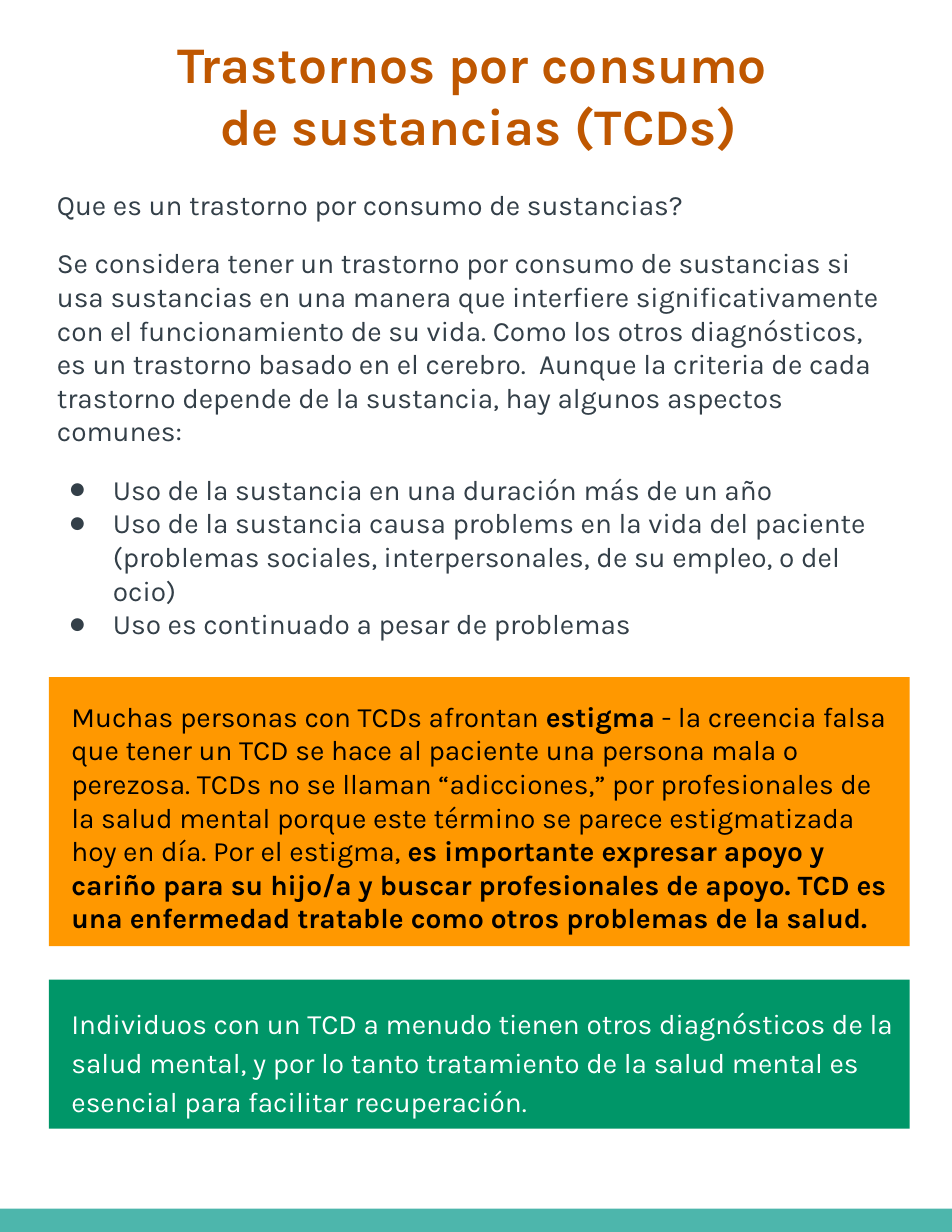
from dataclasses import dataclass

from lxml import etree
from pptx import Presentation
from pptx import util as u
from pptx.dml.color import RGBColor
from pptx.enum import shapes, text
from pptx.oxml.ns import qn

FONT = "Karla"
COLOURS = {
    "title": "BF5700",
    "body": "333F48",
    "stigma_text": "000000",
    "care_text": "FFFFFF",
    "stigma_box": "FF9800",
    "care_box": "009668",
    "footer": "4DB6AC",
}
PAGE_WIDTH, PAGE_HEIGHT = 21.59, 27.94
FOOTER_HEIGHT = 0.53
BOX_LEFT, BOX_WIDTH = 1.11, 19.52


@dataclass
class Paragraph:
    """Runs alternate between regular and bold, starting with regular."""
    runs: tuple[str, ...]
    before: float = 0
    after: float = 0
    line_spacing: float = 1.0
    bullet: bool = False


@dataclass
class Block:
    """A text area in centimetres; insets run left, top, right, bottom."""
    left: float
    top: float
    width: float
    height: float
    colour: str
    paragraphs: list[Paragraph]
    fill: str | None = None
    size: float = 18
    bold: bool = False
    centred: bool = False
    insets: tuple[float, float, float, float] = (0.25, 0.25, 0.25, 0.25)


TITLE = Block(
    -0.35, 0.48, 22.43, 2.03, "title",
    [Paragraph(("Trastornos por consumo ",)), Paragraph(("de sustancias (TCDs)",))],
    size=33, bold=True, centred=True,
)
BODY = Block(
    1.04, 4, 19.51, 12.17, "body",
    [
        Paragraph(("Que es un trastorno por consumo de sustancias?",)),
        Paragraph((
            "Se considera tener un trastorno por consumo de sustancias si usa sustancias "
            "en una manera que interfiere significativamente con el funcionamiento de su "
            "vida. Como los otros diagnósticos, es un trastorno basado en el cerebro.  "
            "Aunque la criteria de cada trastorno depende de la sustancia, hay algunos "
            "aspectos comunes:",
        ), before=16),
        Paragraph(("Uso de la sustancia en una duración más de un año",),
                  before=16, bullet=True),
        Paragraph((
            "Uso de la sustancia causa problems en la vida del paciente (problemas "
            "sociales, interpersonales, de su empleo, o del ocio)",
        ), bullet=True),
        Paragraph(("Uso es continuado a pesar de problemas",), bullet=True),
    ],
)
STIGMA = Block(
    BOX_LEFT, 15.36, BOX_WIDTH, 6.1, "stigma_text",
    [Paragraph((
        "Muchas personas con TCDs afrontan ",
        "estigma",
        " - la creencia falsa que tener un TCD se hace al paciente una persona mala o "
        "perezosa. TCDs no se llaman “adicciones,” por profesionales de la salud mental "
        "porque este término se parece estigmatizada hoy en día. Por el estigma, ",
        "es importante expresar apoyo y cariño para su hijo/a y buscar profesionales de "
        "apoyo. TCD es una enfermedad tratable como otros problemas de la salud.",
    ), after=16)],
    fill="stigma_box", insets=(0.51, 0.5, 0.45, 0.5),
)
CARE = Block(
    BOX_LEFT, 22.22, BOX_WIDTH, 3.38, "care_text",
    [Paragraph((
        "Individuos con un TCD a menudo tienen otros diagnósticos de la salud mental, y "
        "por lo tanto tratamiento de la salud mental es esencial para facilitar "
        "recuperación.",
    ), after=16, line_spacing=1.15)],
    fill="care_box", insets=(0.51, 0.5, 0.25, 0.5),
)


def rgb(name: str) -> RGBColor:
    return RGBColor.from_string(COLOURS[name])


def add_rectangle(slide, left: float, top: float, width: float, height: float, fill: str):
    shape = slide.shapes.add_shape(
        shapes.MSO_SHAPE.RECTANGLE, u.Cm(left), u.Cm(top), u.Cm(width), u.Cm(height))
    shape.shadow.inherit = False
    shape.fill.solid()
    shape.fill.fore_color.rgb = rgb(fill)
    shape.line.fill.background()
    return shape


def add_bullet(paragraph, colour: str) -> None:
    properties = paragraph._p.get_or_add_pPr()
    properties.set("marL", str(u.Cm(1.27)))
    properties.set("indent", str(u.Cm(-0.97)))
    bullet_colour = etree.SubElement(properties, qn("a:buClr"))
    etree.SubElement(bullet_colour, qn("a:srgbClr"), val=COLOURS[colour])
    etree.SubElement(properties, qn("a:buSzPct"), val="60000")
    etree.SubElement(properties, qn("a:buFont"), typeface=FONT)
    etree.SubElement(properties, qn("a:buChar"), char="●")


def write_paragraph(paragraph, content: Paragraph, block: Block) -> None:
    paragraph.alignment = text.PP_ALIGN.CENTER if block.centred else text.PP_ALIGN.LEFT
    paragraph.line_spacing = content.line_spacing
    paragraph.space_before = u.Pt(content.before)
    paragraph.space_after = u.Pt(content.after)
    if content.bullet:
        add_bullet(paragraph, block.colour)
    for index, words in enumerate(content.runs):
        run = paragraph.add_run()
        run.text = words
        run.font.name = FONT
        run.font.size = u.Pt(block.size)
        run.font.bold = block.bold or index % 2 == 1
        run.font.color.rgb = rgb(block.colour)


def add_block(slide, block: Block) -> None:
    place = (block.left, block.top, block.width, block.height)
    if block.fill:
        shape = add_rectangle(slide, *place, block.fill)
    else:
        shape = slide.shapes.add_textbox(*(u.Cm(length) for length in place))
    frame = shape.text_frame
    frame.word_wrap = True
    frame.vertical_anchor = text.MSO_ANCHOR.TOP
    (frame.margin_left, frame.margin_top,
     frame.margin_right, frame.margin_bottom) = (u.Cm(inset) for inset in block.insets)
    for index, content in enumerate(block.paragraphs):
        paragraph = frame.add_paragraph() if index else frame.paragraphs[0]
        write_paragraph(paragraph, content, block)


def main() -> None:
    presentation = Presentation()
    presentation.slide_width = u.Cm(PAGE_WIDTH)
    presentation.slide_height = u.Cm(PAGE_HEIGHT)
    slide = presentation.slides.add_slide(presentation.slide_layouts[6])
    add_rectangle(slide, 0, PAGE_HEIGHT - FOOTER_HEIGHT, PAGE_WIDTH, FOOTER_HEIGHT, "footer")
    for block in (TITLE, BODY, STIGMA, CARE):
        add_block(slide, block)
    presentation.save("out.pptx")


if __name__ == "__main__":
    main()
